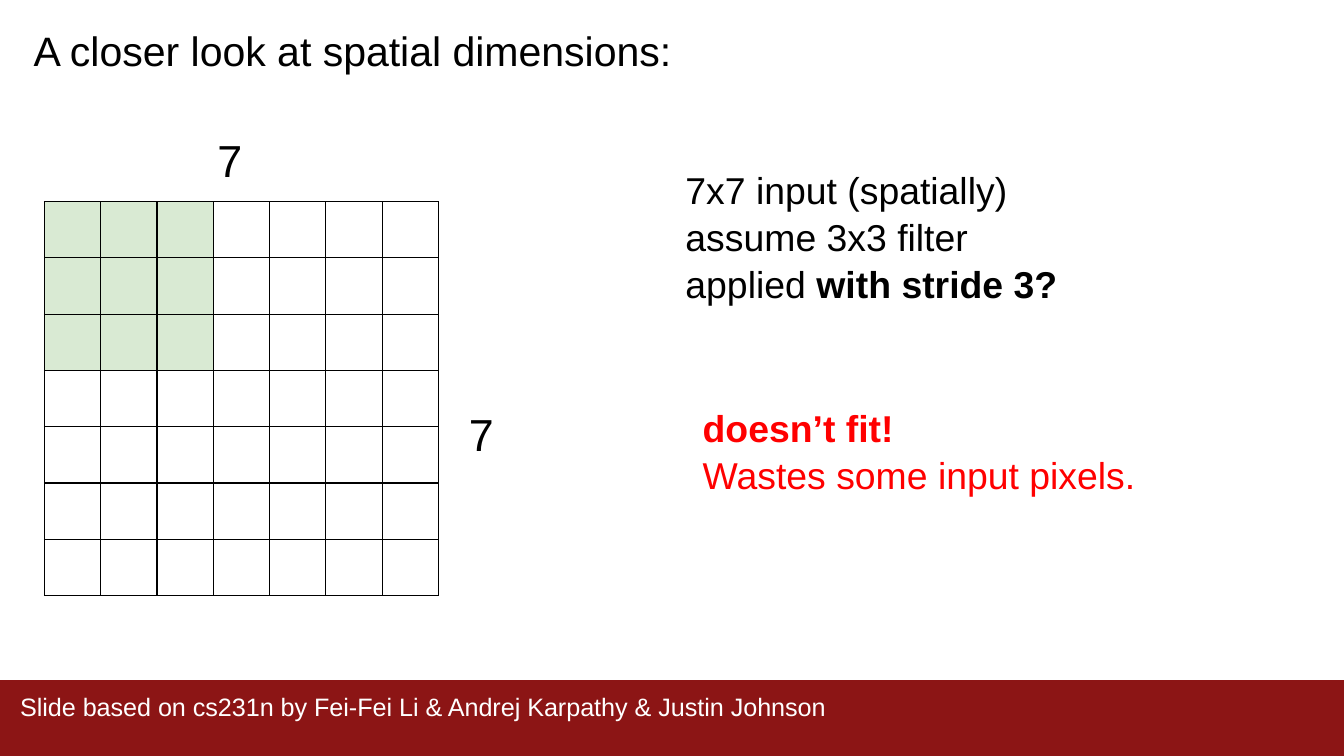
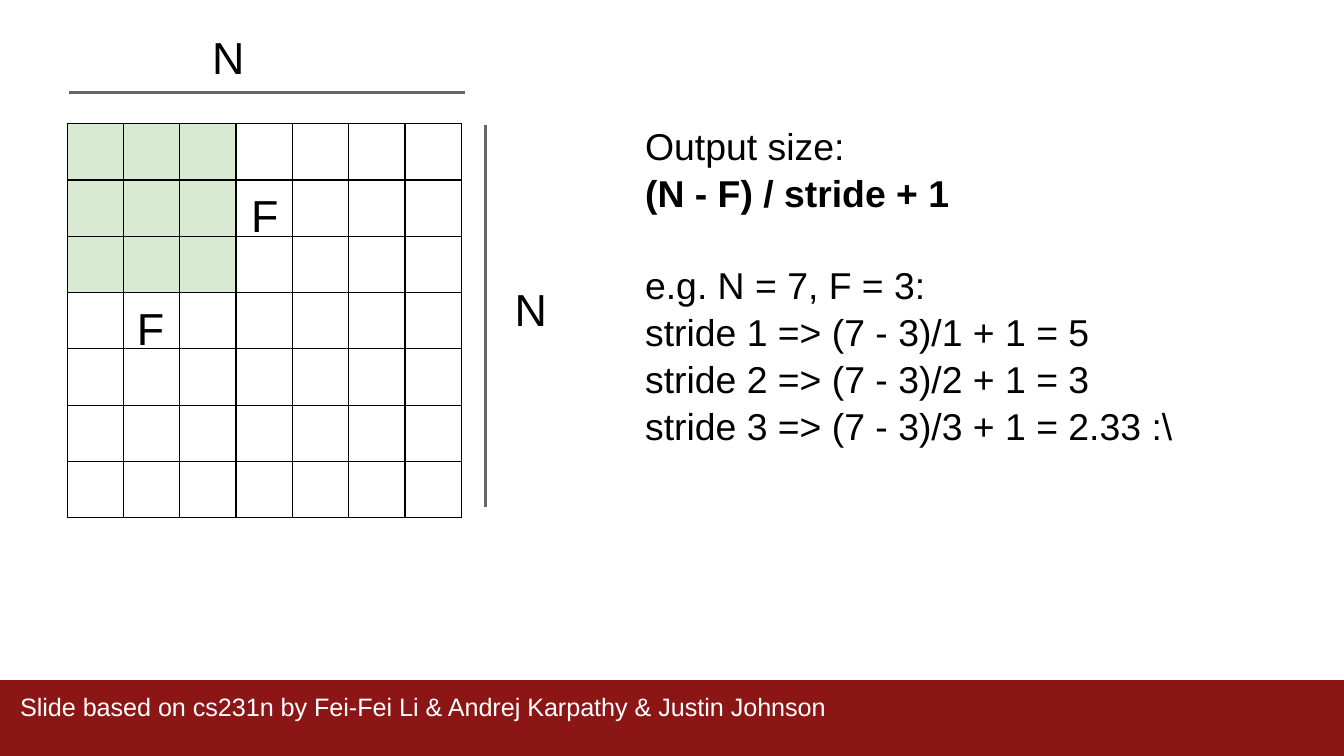
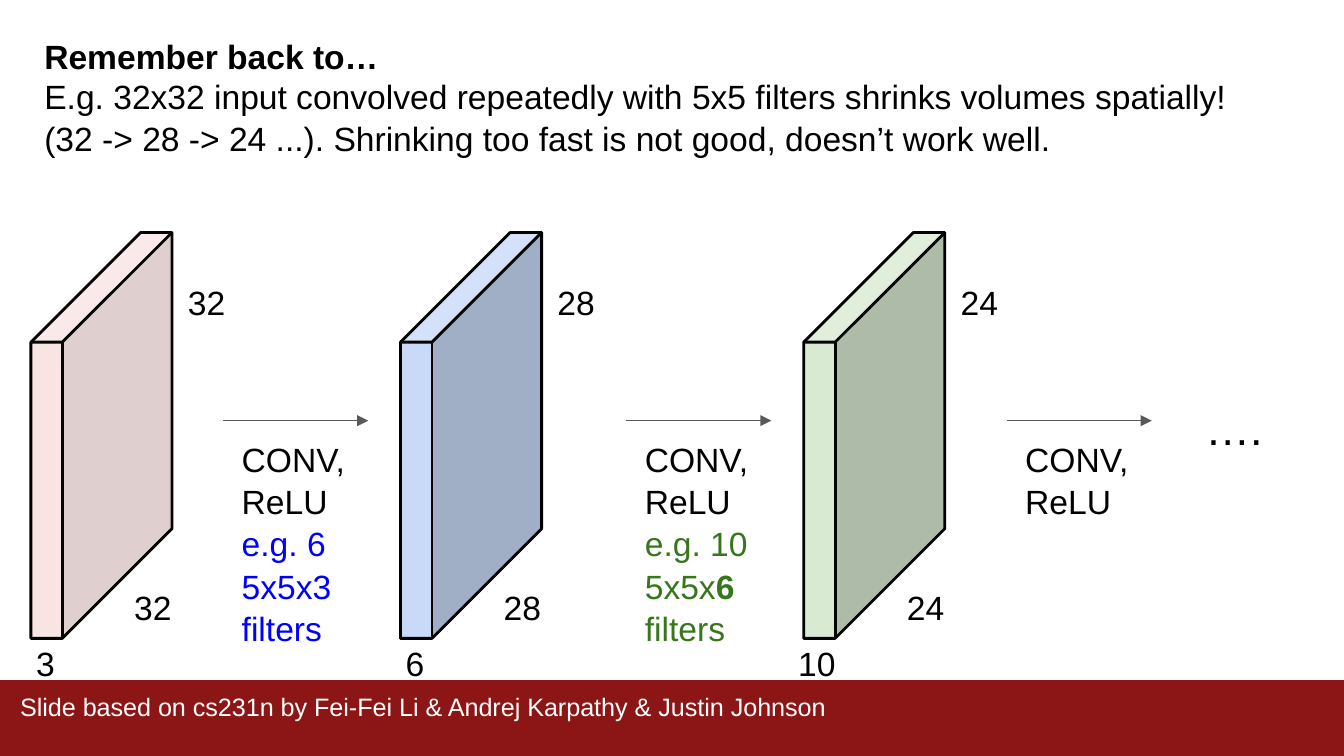
from lxml import etree
from pptx import Presentation
from pptx.dml.color import RGBColor
from pptx.enum.shapes import MSO_CONNECTOR, MSO_SHAPE
from pptx.enum.text import MSO_ANCHOR, MSO_AUTO_SIZE, PP_ALIGN
from pptx.oxml import parse_xml
from pptx.oxml.ns import qn
from pptx.util import Inches, Pt

RECT, CUBE = MSO_SHAPE.RECTANGLE, MSO_SHAPE.CUBE
LINE = MSO_CONNECTOR.STRAIGHT
TOP, LEFT, FIXED = MSO_ANCHOR.TOP, PP_ALIGN.LEFT, MSO_AUTO_SIZE.NONE
NS = "http://schemas.openxmlformats.org/drawingml/2006/main"

# Square grid: the slide is 100 columns wide and 56.25 rows high
COLS, ROWS, UNIT = 100, 56.25, 0.1

FONT = "Arial"
BLACK, WHITE, RED, BLUE = "000000", "FFFFFF", "FF0000", "0000FF"
BAND, GRAY, STEEL = "8C1515", "666666", "595959"
PINK, SKY, MINT, LEAF = "F4CCCC", "C9DAF8", "D9EAD3", "38761D"
CREDIT = "Slide based on cs231n by Fei-Fei Li & Andrej Karpathy & Justin Johnson"


def grid(*cells):
    return [Inches(cell * UNIT) for cell in cells]


def color(code):
    return RGBColor.from_string(code)


class Deck:
    """Holds the style and the current slide."""

    def __init__(self):
        self.prs = Presentation()
        self.prs.slide_width, self.prs.slide_height = grid(COLS, ROWS)
        self.slide = None

    def start(self):
        self.slide = self.prs.slides.add_slide(self.prs.slide_layouts[1])

    def words(self, shape, paras, size, tone=BLACK, inset=1.0, gaps=()):
        """Each paragraph is a list of (text, colour, bold) runs or a string."""
        frame = shape.text_frame
        frame.word_wrap, frame.auto_size = True, FIXED
        frame.vertical_anchor = TOP
        frame.margin_left = frame.margin_right = grid(inset)[0]
        frame.margin_top = frame.margin_bottom = grid(inset)[0]
        for num, runs in enumerate(paras):
            para = frame.add_paragraph() if num else frame.paragraphs[0]
            para.alignment, para.line_spacing = LEFT, 1.05
            para.space_before = Pt(size * 1.2 if num in gaps else 0)
            props = para._p.get_or_add_pPr()
            props.set("marL", "0")
            props.set("indent", "0")
            etree.SubElement(props, qn("a:buNone"))
            for text, tint, bold in [(runs, tone, False)] if isinstance(runs, str) else runs:
                run = para.add_run()
                run.text = text
                font = run.font
                font.name, font.size, font.bold = FONT, Pt(size), bold
                font.color.rgb = color(tint)

    def label(self, at, paras, size, **style):
        box = self.slide.shapes.add_textbox(*grid(*at))
        self.words(box, paras, size, **style)
        return box

    def holder(self, idx, at, paras, size, **style):
        shape = self.slide.placeholders[idx]
        shape.left, shape.top, shape.width, shape.height = grid(*at)
        self.words(shape, paras, size, **style)

    def title(self, at, paras, size, **style):
        self.holder(0, at, paras, size, **style)

    def body(self, at, paras, size, **style):
        self.holder(1, at, paras, size, **style)

    def drop_title(self):
        mark = self.slide.shapes.title.element
        mark.getparent().remove(mark)

    def shape(self, kind, at, fill, edge=None, alpha=None):
        item = self.slide.shapes.add_shape(kind, *grid(*at))
        item.shadow.inherit = False
        item.fill.solid()
        item.fill.fore_color.rgb = color(fill)
        if alpha:
            tint = item.element.spPr.find(".//" + qn("a:srgbClr"))
            etree.SubElement(tint, qn("a:alpha")).set("val", str(alpha * 1000))
        if edge:
            item.line.color.rgb, item.line.width = color(edge), Pt(1.5)
        else:
            item.line.fill.background()
        return item

    def line(self, start, end, tone, width, arrow=False):
        item = self.slide.shapes.add_connector(LINE, *grid(*start, *end))
        item.line.color.rgb, item.line.width = color(tone), Pt(width)
        props = item.element.spPr
        if arrow:
            tip = etree.SubElement(props.find(qn("a:ln")), qn("a:tailEnd"))
            tip.set("type", "triangle")
        etree.SubElement(props, qn("a:effectLst"))

    def table(self, left, top, count=7, near=3, side=4.19):
        """Square input table with the filter marked in its top left corner."""
        span = count * side
        table = self.slide.shapes.add_table(
            count, count, *grid(left, top, span, span)).table
        for part in table.columns:
            part.width = grid(side)[0]
        for part in table.rows:
            part.height = grid(side)[0]
        for row in range(count):
            for col in range(count):
                cell = table.cell(row, col)
                if row < near:
                    cell.fill.solid()
                    cell.fill.fore_color.rgb = color(MINT if col < near else WHITE)
                else:
                    cell.fill.background()
                props = cell._tc.get_or_add_tcPr()
                for num, edge in enumerate("LRTB"):
                    props.insert(num, parse_xml(
                        f'<a:ln{edge} xmlns:a="{NS}" w="9525"><a:solidFill>'
                        f'<a:srgbClr val="{BLACK}"/></a:solidFill></a:ln{edge}>'))

    def footer(self):
        """Draws the band and credit once and hands them to the master."""
        top = 50.6
        band = self.shape(RECT, (0, top, COLS, ROWS - top), BAND)
        note = self.label((0.8, top, 98, ROWS - top), [CREDIT], 13.5,
                          tone=WHITE, inset=0.7)
        tree = self.prs.slide_master.shapes.element
        for num, item in enumerate((band, note)):
            item.element.nvSpPr.cNvPr.set("id", str(50 + num))
            tree.append(item.element)


def stride(deck):
    deck.start()
    deck.footer()
    deck.title((1.5, 0.7, 91.6, 6.6), ["A closer look at spatial dimensions:"], 22)
    deck.body((50, 11.3, 50, 20.1), [
        "7x7 input (spatially)",
        "assume 3x3 filter",
        [("applied ", BLACK, False), ("with stride 3?", BLACK, True)],
    ], 20)
    deck.label((15.2, 8.7, 6, 5), ["7"], 24)
    deck.label((33.9, 29.1, 6.4, 3.1), ["7"], 24)
    deck.table(3.3, 15)
    deck.label((51.3, 29, 43.4, 13.3), [
        [("doesn’t fit!", RED, True)],
        "Wastes some input pixels.",
    ], 20, tone=RED)


def output(deck):
    deck.start()
    deck.drop_title()
    deck.table(5, 9.2)
    # Size marks
    deck.line((5.1, 6.9), (34.6, 6.9), GRAY, 1.5)
    deck.line((36.1, 9.3), (36.1, 37.7), GRAY, 1.5)
    for sign, left, top in (("N", 14.8, 1), ("N", 37.3, 19.8),
                            ("F", 9.2, 21.2), ("F", 17.7, 12.8)):
        deck.label((left, top, 8.5, 4.3), [sign], 24)
    # Formula and worked cases
    cases = ((1, "5"), (2, "3"), (3, "2.33 :\\"))
    deck.body((47, 8, 49.6, 26.4), [
        "Output size:",
        [("(N - F) / stride + 1", BLACK, True)],
        "e.g. N = 7, F = 3:",
        *[f"stride {step} => (7 - 3)/{step} + 1 = {size}" for step, size in cases],
    ], 20, gaps=(2,))


def shrink(deck):
    deck.start()
    deck.title((2.3, 1.5, 93.5, 4), [[("Remember back to…", BLACK, True)]], 18)
    deck.body((2.3, 4.5, 93.5, 8), [
        "E.g. 32x32 input convolved repeatedly with 5x5 filters shrinks volumes spatially!",
        "(32 -> 28 -> 24 ...). Shrinking too fast is not good, doesn’t work well.",
    ], 18)
    # Volumes: left, side, depth, depth offset, fill, alpha
    for left, side, depth, shift, fill, alpha in (
            (2.3, "32", "3", -0.6, PINK, 52),
            (29.8, "28", "6", -0.6, SKY, None),
            (59.8, "24", "10", -1.4, MINT, None)):
        cube = deck.shape(CUBE, (left, 17.3, 10.5, 30.2), fill, BLACK, alpha)
        cube.adjustments[0] = 0.777
        deck.label((left + 6.7, 42.5, 5.4, 3.4), [side], 18)
        deck.label((left + 10.7, 19.8, 5.4, 3.1), [side], 18)
        deck.label((left + shift, 46.7, 5.4, 2), [depth], 18)
    # Steps between volumes
    for left, wide, more in (
            (16.6, 10.8, [[("e.g. 6 5x5x3 filters", BLUE, False)]]),
            (46.6, 11.6, [[("e.g. 10 5x5x", LEAF, False), ("6 ", LEAF, True),
                           ("filters", LEAF, False)]]),
            (74.9, 10.8, [])):
        deck.line((left, 31.3), (left + 10.8, 31.3), STEEL, 0.75, arrow=True)
        deck.label((left + 0.4, 31.5, wide, 4.3), ["CONV,", "ReLU", *more], 18)
    deck.label((88.7, 28.6, 10.5, 3.9), ["…."], 24)


def main():
    deck = Deck()
    for build in (stride, output, shrink):
        build(deck)
    deck.prs.save("out.pptx")


if __name__ == "__main__":
    main()
